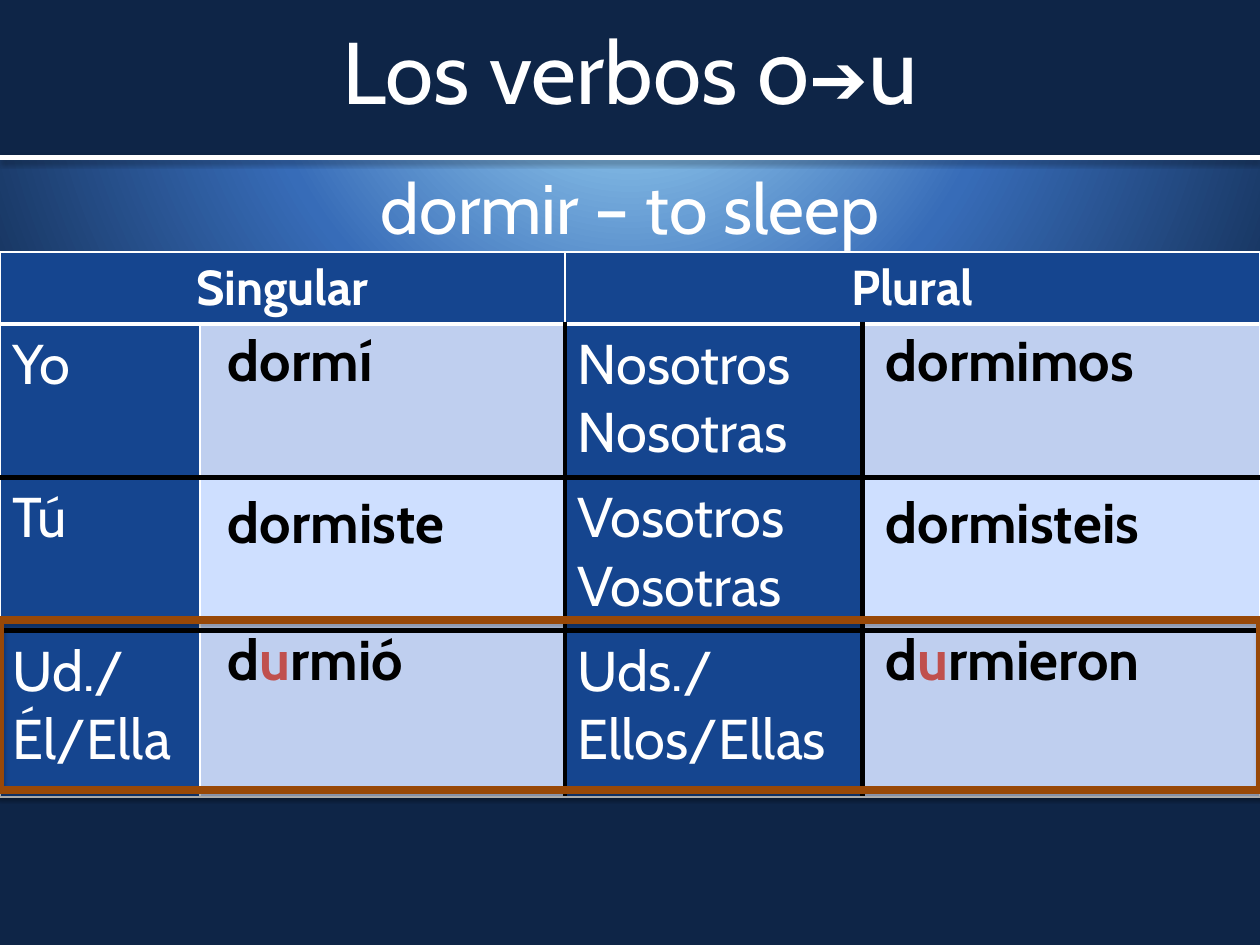
from dataclasses import dataclass

from lxml import etree
from pptx import Presentation
from pptx.dml.color import RGBColor
from pptx.enum.shapes import MSO_CONNECTOR, MSO_SHAPE
from pptx.enum.text import MSO_ANCHOR, MSO_AUTO_SIZE, PP_ALIGN
from pptx.oxml import parse_xml
from pptx.oxml.ns import nsdecls
from pptx.util import Cm, Pt

CENTER, LEFT = PP_ALIGN.CENTER, PP_ALIGN.LEFT
MIDDLE, TOP = MSO_ANCHOR.MIDDLE, MSO_ANCHOR.TOP
NO_AUTOFIT = MSO_AUTO_SIZE.NONE
RECTANGLE = MSO_SHAPE.RECTANGLE
STRAIGHT = MSO_CONNECTOR.STRAIGHT
PLAIN_TABLE = "{2D5ABB26-0587-4C30-8999-92F81FD0307C}"


@dataclass(frozen=True)
class Theme:
    font: str = "Cabin"
    arrow_font: str = "Arial"
    navy: str = "0E2547"
    sky: str = "B1E9FF"
    blue: str = "376CB8"
    label_fill: str = "15458F"
    odd_fill: str = "BFCFEF"
    even_fill: str = "CEDFFF"
    white: str = "FFFFFF"
    black: str = "000000"
    stem_change: str = "C0504D"
    frame: str = "984807"
    title_size: int = 50
    vowel_size: int = 54
    subtitle_size: int = 40
    header_size: int = 28
    body_size: int = 32


theme = Theme()


def write(paragraph, text, size=theme.body_size, color=theme.white, bold=False,
          font=theme.font, align=LEFT):
    paragraph.alignment = align
    run = paragraph.add_run()
    run.text = text
    run.font.name = font
    run.font.size = Pt(size)
    run.font.bold = bold
    run.font.color.rgb = RGBColor.from_string(color)


def add_plain_table(rows, cols, left, top, width, height):
    """Add a table without banding, header style or grid."""
    table = slide.shapes.add_table(rows, cols, Cm(left), Cm(top), Cm(width), Cm(height)).table
    table.first_row = table.horz_banding = False
    table._tbl.tblPr[0].text = PLAIN_TABLE
    return table


prs = Presentation()
prs.slide_width, prs.slide_height = Cm(25.4), Cm(19.05)
slide = prs.slides.add_slide(prs.slide_layouts[0])

# Background: round gradient centred above the slide
stops = "".join(
    f'<a:gs pos="{percent * 1000}"><a:srgbClr val="{color}"/></a:gs>'
    for percent, color in ((0, theme.sky), (48, theme.blue), (100, theme.navy)))
slide._element.cSld.insert(0, parse_xml(
    f'<p:bg {nsdecls("p", "a")}><p:bgPr><a:gradFill rotWithShape="1"><a:gsLst>{stops}</a:gsLst>'
    '<a:path path="circle"><a:fillToRect l="50000" t="-80000" r="50000" b="180000"/></a:path>'
    '</a:gradFill><a:effectLst/></p:bgPr></p:bg>'))

# Title bar, title, infinitive and rule
title_bar = slide.shapes.add_shape(RECTANGLE, 0, 0, Cm(25.4), Cm(3.18))
title_bar.shadow.inherit = False
title_bar.fill.solid()
title_bar.fill.fore_color.rgb = RGBColor.from_string(theme.navy)
title_bar.line.fill.background()
slide.shapes._spTree.insert(2, title_bar._element)

title, infinitive = slide.shapes.title, slide.placeholders[1]
for heading, top, height, anchor in ((title, 0, 2.69, MIDDLE), (infinitive, 3.18, 13.21, TOP)):
    heading.left, heading.top = 0, Cm(top)
    heading.width, heading.height = Cm(25.4), Cm(height)
    heading.text_frame.vertical_anchor = anchor
    heading.text_frame.auto_size = NO_AUTOFIT

for text, size, font in (("Los verbos ", theme.title_size, theme.font),
                         ("o", theme.vowel_size, theme.font),
                         ("➔", theme.subtitle_size, theme.arrow_font),
                         ("u", theme.vowel_size, theme.font)):
    write(title.text_frame.paragraphs[0], text, size=size, font=font, align=CENTER)
write(infinitive.text_frame.paragraphs[0], "dormir – to sleep",
      size=theme.subtitle_size, align=CENTER)

rule = slide.shapes.add_connector(STRAIGHT, 0, Cm(3.18), Cm(25.4), Cm(3.18))
rule.line.color.rgb = RGBColor.from_string(theme.white)
rule.line.width = Pt(3)

# Conjugation grid
col_widths = (4.03, 7.36, 6, 8.01)
row_heights = (1.45, 3.09, 3.09, 3.35)
grid = add_plain_table(4, 4, 0, 5.08, sum(col_widths), sum(row_heights))
for column, width in zip(grid.columns, col_widths):
    column.width = Cm(width)
for row, height in zip(grid.rows, row_heights):
    row.height = Cm(height)

thin, thick = (theme.white, 1), (theme.black, 3)
header_rule = (theme.white, 3)
for r in range(4):
    for c in range(4):
        cell = grid.cell(r, c)
        edges = {
            "lnL": thick if r and c >= 2 else thin,
            "lnR": thick if r and c in (1, 2) else thin,
            "lnT": (thin, header_rule, thick, thick)[r],
            "lnB": (header_rule, thick, thick, thin)[r],
        }
        for tag, (color, width) in edges.items():
            cell._tc.get_or_add_tcPr().append(parse_xml(
                f'<a:{tag} {nsdecls("a")} w="{Pt(width)}"><a:solidFill>'
                f'<a:srgbClr val="{color}"/></a:solidFill></a:{tag}>'))
        is_label = r == 0 or c % 2 == 0
        row_fill = theme.odd_fill if r % 2 else theme.even_fill
        cell.fill.solid()
        cell.fill.fore_color.rgb = RGBColor.from_string(theme.label_fill if is_label else row_fill)

for c, number in ((0, "Singular"), (2, "Plural")):
    grid.cell(0, c).merge(grid.cell(0, c + 1))
    write(grid.cell(0, c).text_frame.paragraphs[0], number,
          size=theme.header_size, bold=True, align=CENTER)

pronouns = ((("Yo",), ("Nosotros", "Nosotras")),
            (("Tú",), ("Vosotros", "Vosotras")))
for r, pair in enumerate(pronouns, start=1):
    for c, lines in zip((0, 2), pair):
        frame = grid.cell(r, c).text_frame
        for i, line in enumerate(lines):
            write(frame.add_paragraph() if i else frame.paragraphs[0], line)
for c, first, second in ((0, "Ud./", "Él/Ella"), (2, "Uds./", "Ellos/Ellas")):
    paragraph = grid.cell(3, c).text_frame.paragraphs[0]
    write(paragraph, first)
    paragraph.add_line_break()
    write(paragraph, second)

# Verb forms, each in its own one-cell table; the second part is the changed vowel
form_tops = (6.48, 9.73, 12.5)
form_columns = (
    (4.34, ((6.25, ("dormí",)), (5.94, ("dormiste",)), (6.25, ("d", "u", "rmió")))),
    (17.6, ((7.16, ("dormimos",)), (6.4, ("dormisteis",)), (6.1, ("d", "u", "rmieron")))),
)
for left, forms in form_columns:
    for top, (width, parts) in zip(form_tops, forms):
        form = add_plain_table(1, 1, left, top, width, 1.6).cell(0, 0)
        form.fill.background()
        for i, part in enumerate(parts):
            write(form.text_frame.paragraphs[0], part, bold=True,
                  color=theme.stem_change if i == 1 else theme.black)

# Frame around the row with the stem change
change_frame = slide.shapes.add_shape(RECTANGLE, 0, Cm(12.5), Cm(25.4), Cm(3.43))
change_frame.shadow.inherit = False
change_frame.fill.background()
change_frame.line.color.rgb = RGBColor.from_string(theme.frame)
change_frame.line.width = Pt(5)

for outlined, distance, opacity in ((rule, 1.6, 38), (change_frame, 1.8, 35)):
    properties = outlined._element.spPr
    for old_effects in properties.findall("{*}effectLst"):
        properties.remove(old_effects)
    effects = parse_xml(f'<a:effectLst {nsdecls("a")}/>')
    effects.append(etree.fromstring(
        f'<a:outerShdw {nsdecls("a")} blurRad="{Pt(3.1)}" dist="{Pt(distance)}" dir="5400000" '
        f'rotWithShape="0"><a:srgbClr val="{theme.black}"><a:alpha val="{opacity * 1000}"/>'
        '</a:srgbClr></a:outerShdw>'))
    properties.append(effects)

prs.save("out.pptx")
